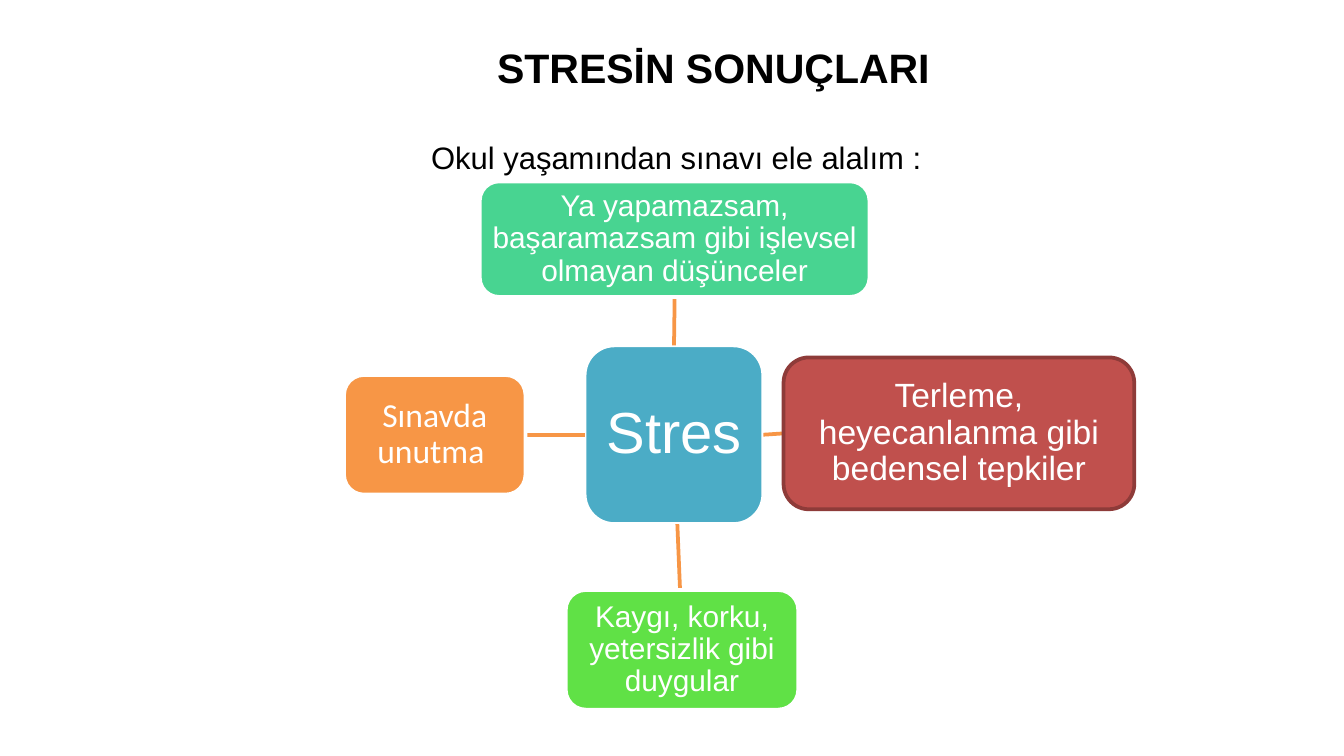
import pptx
import pptx.util
import pptx.dml.color
import pptx.enum.shapes
import pptx.enum.text
import pptx.oxml.ns
import lxml.etree
from dataclasses import dataclass

Inches = pptx.util.Inches
Pt = pptx.util.Pt


@dataclass(frozen=True)
class Theme:
    ink: str = "000000"
    white: str = "FFFFFF"
    hub: str = "4BACC6"
    mint: str = "48D491"
    lime: str = "60E146"
    red: str = "C0504D"
    edge: str = "8E3B39"
    amber: str = "F79646"
    sans: str = "Arial"
    alt: str = "Calibri"
    title: float = 22
    lead: float = 16.6
    core: float = 31
    large: float = 18
    small: float = 16
    rule: float = 2


THEME = Theme()


def tint(code):
    return pptx.dml.color.RGBColor.from_string(code)


def write(para, text, size, color, face, bold=False):
    run = para.add_run()
    run.text = text
    run.font.size = Pt(size)
    run.font.color.rgb = tint(color)
    run.font.name = face
    run.font.bold = bold


def label(slide, box, text, size, bold=False, lines=1.0):
    frame = slide.shapes.add_textbox(*map(Inches, box)).text_frame
    frame.word_wrap = True
    para = frame.paragraphs[0]
    para.line_spacing = lines
    write(para, text, size, THEME.ink, THEME.sans, bold)


def node(slide, box, text, fill, size, pad, edge=THEME.white, face=THEME.sans):
    kind = pptx.enum.shapes.MSO_SHAPE.ROUNDED_RECTANGLE
    shape = slide.shapes.add_shape(kind, *map(Inches, box))
    shape.shadow.inherit = False
    shape.fill.solid()
    shape.fill.fore_color.rgb = tint(fill)
    shape.line.color.rgb = tint(edge)
    shape.line.width = Pt(THEME.rule)
    frame = shape.text_frame
    frame.word_wrap = True
    frame.vertical_anchor = pptx.enum.text.MSO_ANCHOR.MIDDLE
    frame.margin_left = frame.margin_right = Inches(pad)
    frame.margin_top = frame.margin_bottom = Inches(pad)
    para = frame.paragraphs[0]
    para.alignment = pptx.enum.text.PP_ALIGN.CENTER
    para.line_spacing = 0.9
    write(para, text, size, THEME.white, face)
    return shape


def spoke(slide, start, end):
    kind = pptx.enum.shapes.MSO_CONNECTOR.STRAIGHT
    line = slide.shapes.add_connector(kind, *map(Inches, (*start, *end)))
    line.line.color.rgb = tint(THEME.amber)
    line.line.width = Pt(THEME.rule)
    props = line._element.spPr
    lxml.etree.SubElement(props, pptx.oxml.ns.qn("a:effectLst"))
    return line


def web(slide, box):
    left, top = box[:2]

    def place(x, y, *size):
        return left + x, top + y, *size

    hub = node(slide, place(1.79, 1.22, 1.33, 1.33), "Stres",
               THEME.hub, THEME.core, 0.09)
    leaves = [
        (0, (2.45, 1.22), (2.46, 0.86), (1.01, 0, 2.9, 0.86),
         "Ya yapamazsam, başaramazsam gibi işlevsel olmayan düşünceler",
         THEME.mint, THEME.small, 0.04),
        (None, (2.48, 2.55), (2.5, 3.04), (1.65, 3.04, 1.73, 0.89),
         "Kaygı, korku, yetersizlik gibi duygular",
         THEME.lime, THEME.small, 0.04),
        (3, (3.12, 1.88), (3.27, 1.88), (3.27, 1.31, 2.61, 1.13),
         "Terleme, heyecanlanma gibi bedensel tepkiler",
         THEME.red, THEME.large, 0.05, THEME.edge),
        (1, (1.79, 1.88), (1.35, 1.88), (0, 1.44, 1.35, 0.89),
         "Sınavda unutma ",
         THEME.amber, THEME.large, 0.05, THEME.white, THEME.alt),
    ]
    for side, start, end, spot, *look in leaves:
        line = spoke(slide, place(*start), place(*end))
        leaf = node(slide, place(*spot), *look)
        if side is not None:
            line.begin_connect(hub, side)
            line.end_connect(leaf, (side + 2) % 4)


def main():
    deck = pptx.Presentation()
    deck.slide_width = Inches(10)
    deck.slide_height = Inches(10 * 9 / 16)
    slide = deck.slides.add_slide(deck.slide_layouts[6])
    label(slide, (3.11, 0.84, 4.11, 0.55),
          "Okul yaşamından sınavı ele alalım :", THEME.lead, lines=1.5)
    web(slide, (2.56, 1.35, 5.88, 3.93))
    label(slide, (3.6, 0.27, 5.98, 0.47),
          "STRESİN SONUÇLARI", THEME.title, bold=True)
    deck.save("out.pptx")


if __name__ == "__main__":
    main()
